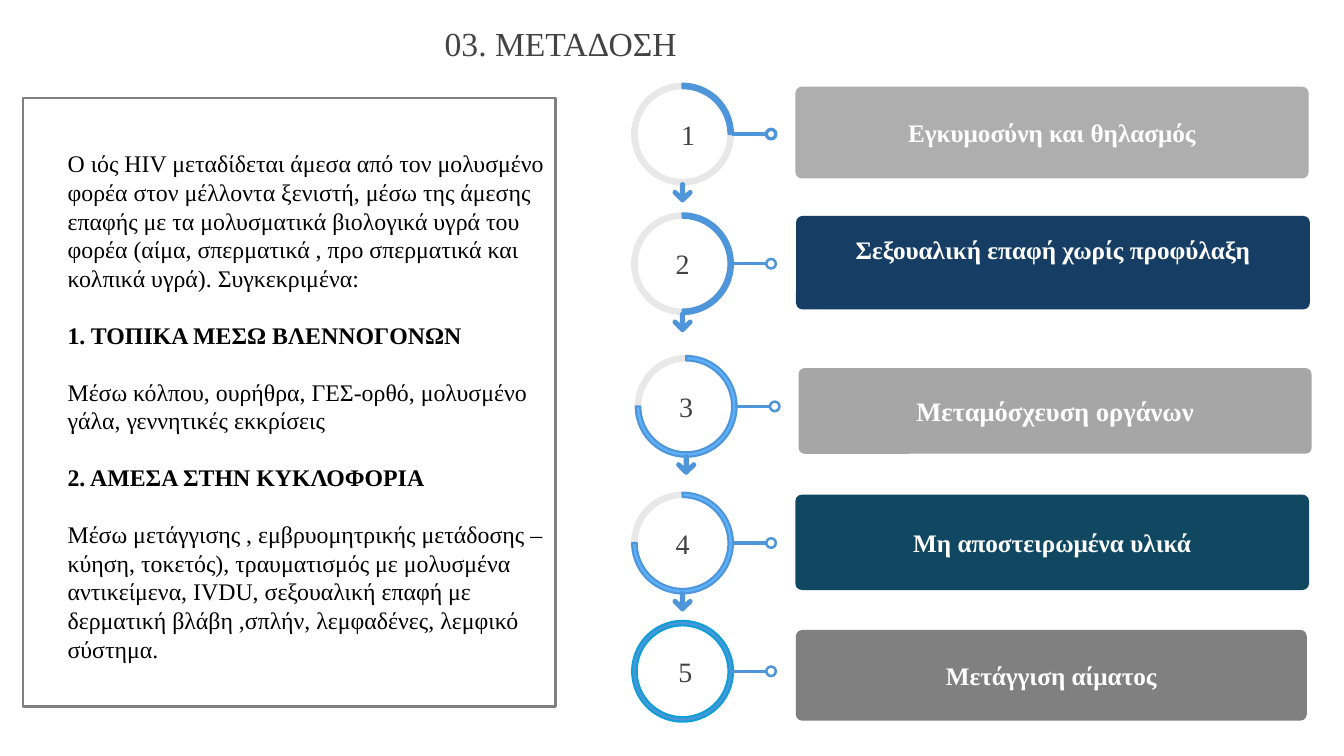
"""Build the slide on HIV transmission with five numbered routes."""
from lxml import etree
from pptx import Presentation
from pptx.dml.color import RGBColor
from pptx.enum import shapes as s, text as t
from pptx.oxml import ns
from pptx.util import Pt

BLUE, GREY, WHITE, INK = "4E95D9", "E8E8E8", "FFFFFF", "434343"
CENTER, LEFT = t.PP_ALIGN.CENTER, t.PP_ALIGN.LEFT


def paint(shape, fill=None, line=None, width=1.5):
    shape.shadow.inherit = False
    for part, color in ((shape.fill, fill), (shape.line.fill, line)):
        if color:
            part.solid()
            part.fore_color.rgb = RGBColor.from_string(color)
        else:
            part.background()
    if line:
        shape.line.width = Pt(width)


def write(shape, words, size, color, align=CENTER, bold=False, low=9.4):
    frame = shape.text_frame
    frame.word_wrap = True
    frame.vertical_anchor = t.MSO_ANCHOR.MIDDLE
    frame.margin_left = frame.margin_right = frame.margin_top = Pt(9.4)
    frame.margin_bottom = Pt(low)
    frame.text = words
    for para in frame.paragraphs:
        para.alignment = align
        font = para.font
        font.name, font.size, font.bold = "Times New Roman", Pt(size), bold
        font.color.rgb = RGBColor.from_string(color)
    return frame


deck = Presentation()
deck.slide_width, deck.slide_height = Pt(960), Pt(540)
slide = deck.slides.add_slide(deck.slide_layouts[6])
items = slide.shapes

title = items.add_textbox(Pt(308.2), Pt(11), Pt(260.6), Pt(40))
write(title, "03. ΜΕΤΑΔΟΣΗ", 24, INK, LEFT)

frame = items.add_shape(s.MSO_SHAPE.RECTANGLE, Pt(16.6), Pt(69.8), Pt(380.2), Pt(434.9))
paint(frame, None, "808080")

lines = [
    "Ο ιός HIV μεταδίδεται άμεσα από τον μολυσμένο φορέα στον μέλλοντα ξενιστή, "
    "μέσω της άμεσης επαφής με τα μολυσματικά βιολογικά υγρά του φορέα "
    "(αίμα, σπερματικά , προ σπερματικά και κολπικά υγρά). Συγκεκριμένα:",
    "1. ΤΟΠΙΚΑ ΜΕΣΩ ΒΛΕΝΝΟΓΟΝΩΝ",
    "Μέσω κόλπου, ουρήθρα, ΓΕΣ-ορθό, μολυσμένο γάλα, γεννητικές εκκρίσεις",
    "2. ΑΜΕΣΑ ΣΤΗΝ ΚΥΚΛΟΦΟΡΙΑ",
    "Μέσω μετάγγισης , εμβρυομητρικής μετάδοσης – κύηση, τοκετός), "
    "τραυματισμός με μολυσμένα αντικείμενα, IVDU, σεξουαλική επαφή με "
    "δερματική βλάβη ,σπλήν, λεμφαδένες, λεμφικό σύστημα.",
]
body = items.add_textbox(Pt(38.9), Pt(97.2), Pt(360), Pt(369.4))
story = write(body, "\n".join(lines), 17, "000000", LEFT)
story.vertical_anchor = t.MSO_ANCHOR.TOP
for i, para in enumerate(story.paragraphs):
    para.line_spacing = Pt(20.4)
    para.font.bold = i % 2 == 1
    if i:
        para.space_before = Pt(20.4)

# name, ring x, ring y, arc end, number shift, bar box, fill, size, low inset
routes = [
    ("Εγκυμοσύνη και θηλασμός", 487.6, 95.8, 0, 4, (568.2, 61.9, 366.5, 65.6), "AEAEAE", 18, 9.4),
    ("Σεξουαλική επαφή χωρίς προφύλαξη", 487.6, 188.4, 90, 0, (568.6, 154.2, 367, 66.8), "163E64", 18, 27.8),
    ("Μεταμόσχευση οργάνων", 490.2, 290.3, 180, 0, (570.4, 262.9, 366.5, 61.2), "A6A6A6", 19, 9.4),
    ("Μη αποστειρωμένα υλικά", 487.6, 387.9, 180, 0, (568.1, 353.3, 367, 68.2), "104862", 18, 9.4),
    ("Μετάγγιση αίματος", 487.6, 479.5, None, 2, (568.5, 450, 365, 64.8), "808080", 18, 9.4),
]
half = [(0, 14.6), (1, 14.3), (6.6, 8.8), (7.2, 7.4), (6.6, 6.1), (5.4, 5.6),
        (4.3, 6.1), (1.9, 8.3), (1.9, 1.9), (1.4, 0.6), (0, 0)]
tip = half + [(-x, y) for x, y in half[-2:0:-1]]

for num, (name, x, y, end, shift, box, fill, size, low) in enumerate(routes, 1):
    bar = items.add_shape(s.MSO_SHAPE.ROUNDED_RECTANGLE, *map(Pt, box))
    bar.adjustments[0] = 0.07
    paint(bar, fill)
    write(bar, name, size, WHITE, bold=True, low=low)

    ring = Pt(x - 36), Pt(y - 36), Pt(72), Pt(72)
    if end is None:
        loop = items.add_shape(s.MSO_SHAPE.DONUT, *ring)
        loop.adjustments[0] = 0.045
        paint(loop, BLUE, "0F9ED5")
    else:
        inner = "5EB2FC" if end == 180 else BLUE
        for start, stop, core, edge in ((end, 270, GREY, GREY), (270, end, inner, BLUE)):
            arc = items.add_shape(s.MSO_SHAPE.BLOCK_ARC, *ring)
            for k, value in enumerate((start * 0.6, stop * 0.6, 0.045)):
                arc.adjustments[k] = value
            paint(arc, core, edge)
        pen = items.build_freeform(Pt(x), Pt(y + 48.8), scale=1)
        pen.add_line_segments([(Pt(x + a), Pt(y + 34.2 + b)) for a, b in tip[1:]])
        paint(pen.convert_to_shape(), BLUE)

    width = 3 if num == 1 else 2.4
    stem = items.add_connector(s.MSO_CONNECTOR.STRAIGHT, Pt(x + 35), Pt(y), Pt(x + 60), Pt(y))
    stem.line.width = Pt(width)
    stem.line.color.rgb = RGBColor.from_string(BLUE)
    etree.SubElement(stem._element.spPr, ns.qn("a:effectLst"))
    dot = items.add_shape(s.MSO_SHAPE.OVAL, Pt(x + 59.8), Pt(y - 3.4), Pt(6.8), Pt(6.8))
    paint(dot, None, BLUE, width - 0.6)

    label = items.add_textbox(Pt(x - 36 + shift), Pt(y - 16), Pt(72), Pt(32))
    write(label, str(num), 20, INK)

deck.save("out.pptx")
